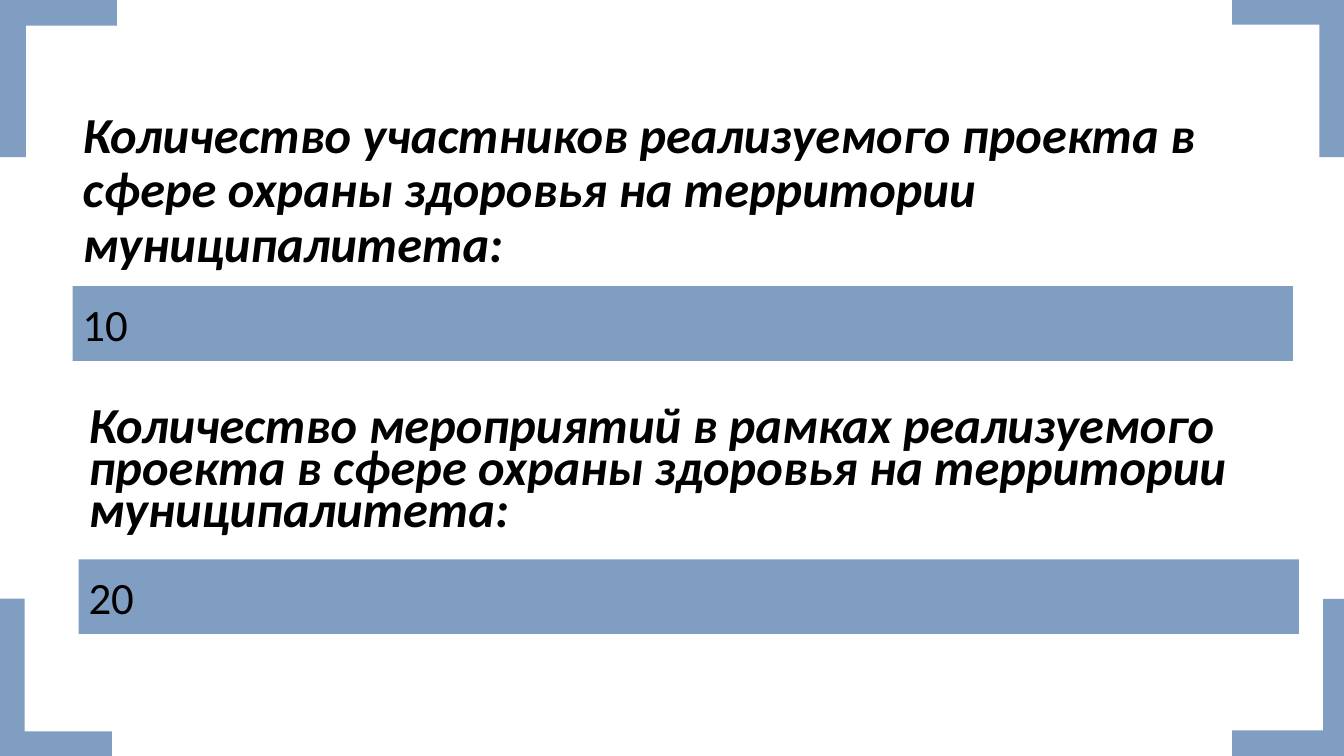
import pptx
import pptx.dml.color
import pptx.enum.shapes
import pptx.enum.text
import pptx.util

COLORS = {"blue": "809EC2", "black": "000000"}
FONT = "Calibri"
SLIDE_W = pptx.util.Inches(13.33)
SLIDE_H = pptx.util.Inches(7.5)
SHAPE = pptx.enum.shapes.MSO_SHAPE
ALIGN = pptx.enum.text.PP_ALIGN
ANCHOR = pptx.enum.text.MSO_ANCHOR

HEADING_W, HEADING_H = 88.2, 18.93
BAR_W, BAR_H = 90.8, 9.87
CORNER_H = 20.8


def across(percent):
    return round(SLIDE_W * percent / 100)


def down(percent):
    return round(SLIDE_H * percent / 100)


def box(left, top, width, height):
    """Turn percentages of the slide into left, top, width and height."""
    return across(left), down(top), across(width), down(height)


def rgb(name):
    return pptx.dml.color.RGBColor.from_string(COLORS[name])


def add_blue_shape(s, kind, *place):
    sp = s.shapes.add_shape(kind, *place)
    sp.shadow.inherit = False
    sp.fill.solid()
    sp.fill.fore_color.rgb = rgb("blue")
    sp.line.fill.background()
    return sp


def add_corner(s, center_x, center_y, width, rotation):
    """Place a corner by its centre; quarter turns swap its two sides."""
    w, h = across(width), down(CORNER_H)
    if rotation % 180:
        w, h = h, w
    sp = add_blue_shape(s, SHAPE.CORNER, across(center_x) - w // 2,
                        down(center_y) - h // 2, w, h)
    sp.adjustments[0] = 0.22
    sp.adjustments[1] = 0.22
    sp.rotation = rotation


def write(sp, text, size, align, spacing=1.0, emphasis=False):
    tf = sp.text_frame
    tf.text = text
    tf.word_wrap = True
    tf.auto_size = pptx.enum.text.MSO_AUTO_SIZE.NONE
    tf.vertical_anchor = ANCHOR.MIDDLE
    p = tf.paragraphs[0]
    p.alignment = align
    p.line_spacing = spacing
    r = p.runs[0]
    r.font.name = FONT
    r.font.size = pptx.util.Pt(size)
    r.font.bold = r.font.italic = emphasis
    r.font.color.rgb = rgb("black")


def add_title(s, left, top, text):
    sp = s.shapes.title
    sp.left, sp.top, sp.width, sp.height = box(left, top, HEADING_W, HEADING_H)
    write(sp, text, 36, ALIGN.LEFT, 0.9, True)


def add_heading(s, left, top, text):
    sp = s.shapes.add_textbox(*box(left, top, HEADING_W, HEADING_H))
    write(sp, text, 36, ALIGN.LEFT, 0.7, True)


def add_value_bar(s, left, top, text):
    sp = add_blue_shape(s, SHAPE.RECTANGLE, *box(left, top, BAR_W, BAR_H))
    write(sp, text, 32, ALIGN.JUSTIFY)


def main():
    prs = pptx.Presentation()
    prs.slide_width, prs.slide_height = SLIDE_W, SLIDE_H
    s = prs.slides.add_slide(prs.slide_layouts[5])

    for corner in ((4.17, 89.6, 8.33, 0), (95.83, 10.4, 8.33, 180),
                   (96.02, 89.6, 8.7, 270), (4.35, 10.4, 8.7, 90)):
        add_corner(s, *corner)

    add_title(s, 5.4, 15.87, "Количество участников реализуемого проекта в "
              "сфере охраны здоровья на территории муниципалитета:")
    add_value_bar(s, 5.4, 37.87, "10")
    add_heading(s, 5.85, 53.07, "Количество мероприятий в рамках реализуемого "
                "проекта в сфере охраны здоровья на территории муниципалитета:")
    add_value_bar(s, 5.85, 74, "20")

    prs.save("out.pptx")


if __name__ == "__main__":
    main()
